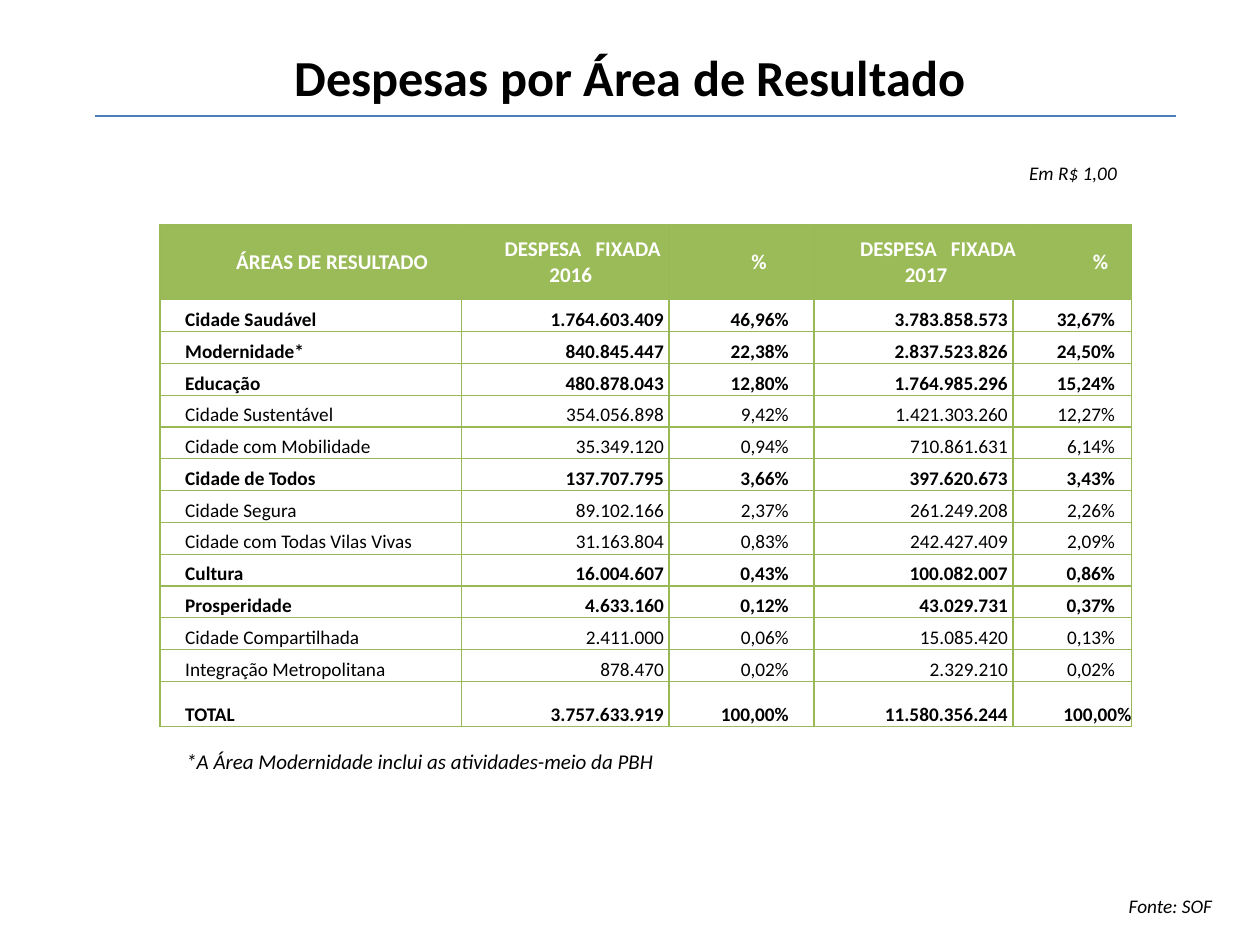
from lxml.etree import SubElement
from pptx import Presentation
from pptx.dml.color import RGBColor
from pptx.enum.shapes import MSO_CONNECTOR
from pptx.enum.text import MSO_ANCHOR as Anchor, PP_ALIGN as Align
from pptx.oxml.ns import qn
from pptx.util import Inches, Pt

TITLE = "Despesas por Área de Resultado"
NOTES = [
    ("Em R$ 1,00", 11, (8.07, 1.23, 0.91, 0.29)),
    ("Fonte: SOF", 11, (8.86, 7.05, 0.87, 0.29)),
    ("*A Área Modernidade inclui as atividades-meio da PBH", 12, (1.38, 5.89, 3.94, 0.3)),
]
HEADERS = [
    (0, "ÁREAS DE RESULTADO", 0.25),
    (1, "DESPESA   FIXADA 2016", 0.19),
    (2, "%", 0.19),
    (3, "DESPESA   FIXADA 2017", 0.19),
    (5, "%", 0.25),
]
AREAS = [
    ("Cidade Saudável", "1.764.603.409", "46,96%", "3.783.858.573", "32,67%"),
    ("Modernidade*", "840.845.447", "22,38%", "2.837.523.826", "24,50%"),
    ("Educação", "480.878.043", "12,80%", "1.764.985.296", "15,24%"),
    ("Cidade Sustentável", "354.056.898", "9,42%", "1.421.303.260", "12,27%"),
    ("Cidade com Mobilidade", "35.349.120", "0,94%", "710.861.631", "6,14%"),
    ("Cidade de Todos", "137.707.795", "3,66%", "397.620.673", "3,43%"),
    ("Cidade Segura", "89.102.166", "2,37%", "261.249.208", "2,26%"),
    ("Cidade com Todas Vilas Vivas", "31.163.804", "0,83%", "242.427.409", "2,09%"),
    ("Cultura", "16.004.607", "0,43%", "100.082.007", "0,86%"),
    ("Prosperidade", "4.633.160", "0,12%", "43.029.731", "0,37%"),
    ("Cidade Compartilhada", "2.411.000", "0,06%", "15.085.420", "0,13%"),
    ("Integração Metropolitana", "878.470", "0,02%", "2.329.210", "0,02%"),
    ("TOTAL", "3.757.633.919", "100,00%", "11.580.356.244", "100,00%"),
]
BOLD_AREAS = {"Cidade Saudável", "Modernidade*", "Educação", "Cidade de Todos",
              "Cultura", "Prosperidade", "TOTAL"}
COLUMN_WIDTHS = [2.39, 1.65, 1.15, 1.58, 0.11, 0.83]
RIGHT_GAPS = [0, 0.04, 0.2, 0.04, 0.13]
TABLE_LEFT, TABLE_TOP, TABLE_HEIGHT = 1.27, 1.78, 3.99
HEADER_HEIGHT, TOTAL_HEIGHT = 0.6, 0.36
GREEN, BORDER, BLUE = "9BBB59", "98B955", "4B7EBC"
BLACK, WHITE = "000000", "FFFFFF"


def color(value):
    return RGBColor.from_string(value)


def set_font(paragraph, size, value, bold=False, italic=False):
    font = paragraph.font
    font.name, font.size, font.bold, font.italic = "Calibri", Pt(size), bold, italic
    font.color.rgb = color(value)


def add_borders(cell):
    properties = cell._tc.get_or_add_tcPr()
    for side in ("a:lnL", "a:lnR", "a:lnT", "a:lnB"):
        line = SubElement(properties, qn(side), w=str(Pt(0.75)))
        fill = SubElement(line, qn("a:solidFill"))
        SubElement(fill, qn("a:srgbClr"), val=BORDER)


def fill_cell(cell, text, size, value, bold, align, left=0, right=0, indent=0):
    cell.text = text
    paragraph = cell.text_frame.paragraphs[0]
    paragraph.alignment = align
    properties = paragraph._p.get_or_add_pPr()
    for name, gap in (("marL", left), ("marR", right), ("indent", indent)):
        properties.set(name, str(Inches(gap)))
    set_font(paragraph, size, value, bold)


def add_expense_table(slide):
    shape = slide.shapes.add_table(
        len(AREAS) + 1, len(COLUMN_WIDTHS), Inches(TABLE_LEFT), Inches(TABLE_TOP),
        Inches(sum(COLUMN_WIDTHS)), Inches(TABLE_HEIGHT))
    table = shape.table
    table.horz_banding = False
    for column, width in zip(table.columns, COLUMN_WIDTHS):
        column.width = Inches(width)
    area_height = (TABLE_HEIGHT - HEADER_HEIGHT - TOTAL_HEIGHT) / (len(AREAS) - 1)
    heights = [HEADER_HEIGHT] + [area_height] * (len(AREAS) - 1) + [TOTAL_HEIGHT]
    for index, (row, height) in enumerate(zip(table.rows, heights)):
        row.height = Inches(height)
        for cell in row.cells:
            add_borders(cell)
            cell.margin_left = cell.margin_right = cell.margin_top = cell.margin_bottom = 0
            cell.vertical_anchor = Anchor.BOTTOM if index else Anchor.MIDDLE
            if index:
                cell.fill.background()
            else:
                cell.fill.solid()
                cell.fill.fore_color.rgb = color(GREEN)
        first = 4 if index else 3
        table.cell(index, first).merge(table.cell(index, first + 1))

    for column, text, indent in HEADERS:
        fill_cell(table.cell(0, column), text, 12, WHITE, True, Align.CENTER, 0.09, 0, indent)
    for index, area in enumerate(AREAS, 1):
        for column, (text, gap) in enumerate(zip(area, RIGHT_GAPS)):
            if index == len(AREAS) and column == 4:
                gap = 0
            fill_cell(table.cell(index, column), text, 11, BLACK, area[0] in BOLD_AREAS,
                      Align.RIGHT if column else Align.LEFT, 0 if column else 0.2, gap)


def main():
    presentation = Presentation()
    presentation.slide_width, presentation.slide_height = Inches(10), Inches(7.5)
    slide = presentation.slides.add_slide(presentation.slide_layouts[5])

    title = slide.shapes.title
    title.left, title.top, title.width, title.height = map(Inches, (0.5, 0.3, 9, 0.61))
    title.text_frame.text = TITLE
    title.text_frame.vertical_anchor = Anchor.MIDDLE
    title.text_frame.paragraphs[0].alignment = Align.CENTER
    set_font(title.text_frame.paragraphs[0], 28.8, BLACK, bold=True)

    rule = slide.shapes.add_connector(
        MSO_CONNECTOR.STRAIGHT, *map(Inches, (0.75, 0.92, 9.33, 0.92)))
    rule.line.color.rgb = color(BLUE)
    rule.line.width = Pt(0.75)
    SubElement(rule._element.spPr, qn("a:effectLst"))

    for text, size, place in NOTES:
        frame = slide.shapes.add_textbox(*map(Inches, place)).text_frame
        frame.word_wrap = False
        frame.text = text
        set_font(frame.paragraphs[0], size, BLACK, italic=True)

    add_expense_table(slide)
    presentation.save("out.pptx")


if __name__ == "__main__":
    main()
